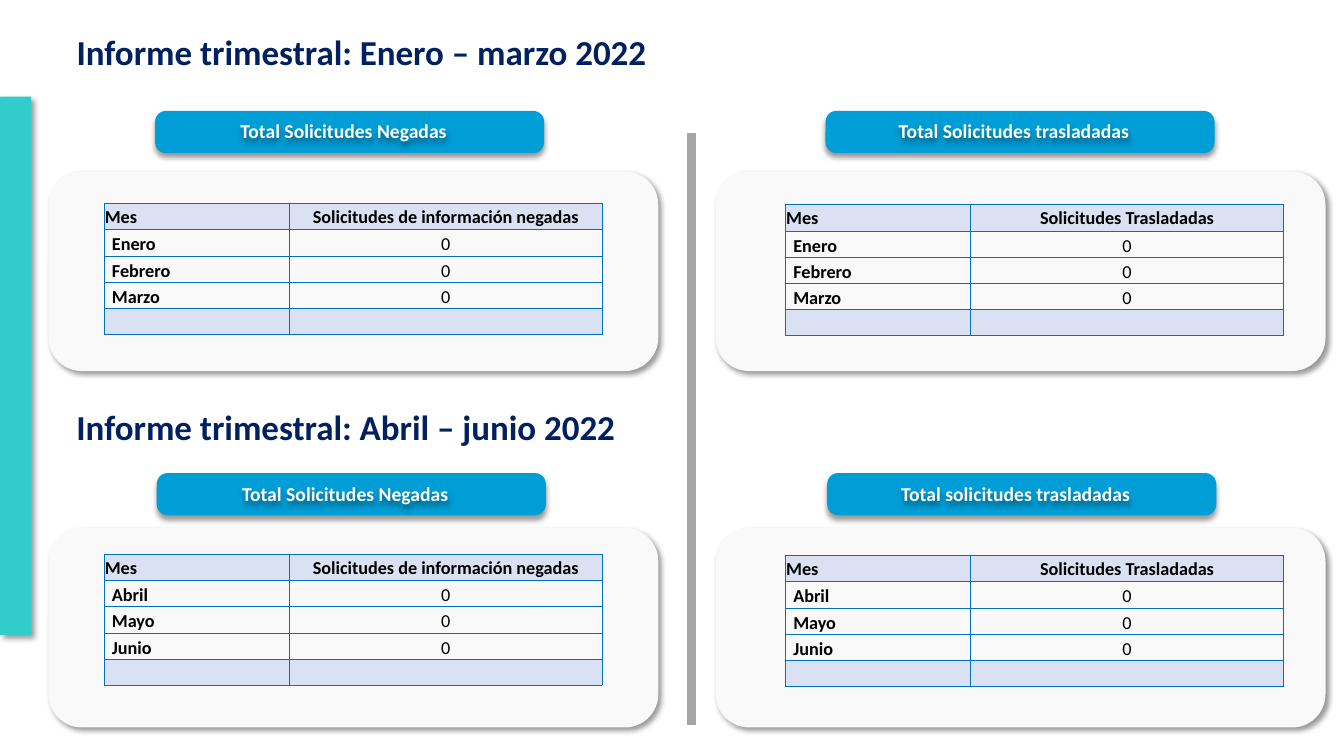
"""Builds the slide of quarterly tables of denied and transferred requests."""
from dataclasses import dataclass

from lxml import etree
from pptx import Presentation
from pptx.dml.color import RGBColor
from pptx.enum.shapes import MSO_CONNECTOR, MSO_SHAPE
from pptx.enum.text import MSO_ANCHOR, MSO_AUTO_SIZE, PP_ALIGN
from pptx.oxml.ns import qn
from pptx.shapes.autoshape import Shape
from pptx.slide import Slide
from pptx.table import _Cell
from pptx.text.text import TextFrame
from pptx.util import Pt

ROUNDED, RECTANGLE = MSO_SHAPE.ROUNDED_RECTANGLE, MSO_SHAPE.RECTANGLE
STRAIGHT = MSO_CONNECTOR.STRAIGHT
LEFT, CENTER = PP_ALIGN.LEFT, PP_ALIGN.CENTER
TOP, MIDDLE, BOTTOM = MSO_ANCHOR.TOP, MSO_ANCHOR.MIDDLE, MSO_ANCHOR.BOTTOM
GROW = MSO_AUTO_SIZE.SHAPE_TO_FIT_TEXT


@dataclass(frozen=True)
class Theme:
    font: str = "Calibri"
    heading_size: float = 25
    banner_size: float = 14
    table_size: float = 13
    heading: RGBColor = RGBColor(0x00, 0x20, 0x60)
    accent: RGBColor = RGBColor(0x33, 0xCC, 0xCC)
    banner: RGBColor = RGBColor(0x01, 0x9D, 0xD6)
    banner_text: RGBColor = RGBColor(0xFF, 0xFF, 0xFF)
    panel: RGBColor = RGBColor(0xF9, 0xF9, 0xF9)
    divider: RGBColor = RGBColor(0xA5, 0xA5, 0xA5)
    band: RGBColor = RGBColor(0xD9, 0xE1, 0xF2)
    border: RGBColor = RGBColor(0x00, 0x70, 0xC0)
    table_text: RGBColor = RGBColor(0x00, 0x00, 0x00)
    shadow: RGBColor = RGBColor(0x00, 0x00, 0x00)


@dataclass(frozen=True)
class Box:
    left: float
    top: float
    width: float
    height: float

    def emu(self) -> tuple[Pt, Pt, Pt, Pt]:
        return Pt(self.left), Pt(self.top), Pt(self.width), Pt(self.height)


@dataclass(frozen=True)
class Quarter:
    heading: str
    months: tuple[str, ...]
    banners: tuple[str, str]
    heading_top: float
    banner_top: float
    banner_shift: float
    panel_top: float
    table_top: float


@dataclass(frozen=True)
class Category:
    count_header: str
    panel_left: float
    banner_left: float
    table_left: float
    table_drop: float


THEME = Theme()
QUARTERS = (
    Quarter("Informe trimestral: Enero – marzo 2022", ("Enero", "Febrero", "Marzo"),
            ("Total Solicitudes Negadas", "Total Solicitudes trasladadas"),
            18, 79.2, 0, 122.4, 145.4),
    Quarter("Informe trimestral: Abril – junio 2022", ("Abril", "Mayo", "Junio"),
            ("Total Solicitudes Negadas", "Total solicitudes trasladadas"),
            285.8, 337.9, 1.2, 377, 396),
)
CATEGORIES = (
    Category("Solicitudes de información negadas", 34.6, 110.8, 74.2, 0),
    Category("Solicitudes Trasladadas", 511.2, 589.7, 560.9, 0.8),
)
COLUMN_WIDTHS = (132.5, 223.2)
ROW_HEIGHT = 18.7


def cast_shadow(shape: Shape, degrees: int) -> None:
    shape.shadow.inherit = False
    effects = shape._element.spPr.find(qn("a:effectLst"))
    shadow = etree.SubElement(effects, qn("a:outerShdw"), blurRad=str(Pt(4)), dist=str(Pt(3)),
                              dir=str(degrees * 60000), algn="t", rotWithShape="0")
    color = etree.SubElement(shadow, qn("a:srgbClr"), val=str(THEME.shadow))
    etree.SubElement(color, qn("a:alpha"), val="40000")


def add_block(shapes, kind: int, box: Box, color: RGBColor, degrees: int = 45) -> Shape:
    block = shapes.add_shape(kind, *box.emu())
    block.fill.solid()
    block.fill.fore_color.rgb = color
    block.line.fill.background()
    cast_shadow(block, degrees)
    return block


def write(frame: TextFrame, text: str, size: float, color: RGBColor,
          align: PP_ALIGN = LEFT, bold: bool = True) -> None:
    frame.text = text
    paragraph = frame.paragraphs[0]
    paragraph.alignment = align
    for run in paragraph.runs:
        run.font.name = THEME.font
        run.font.size = Pt(size)
        run.font.bold = bold
        run.font.color.rgb = color


def format_heading(heading: Shape, box: Box, text: str) -> None:
    heading.left, heading.top, heading.width, heading.height = box.emu()
    frame = heading.text_frame
    frame.word_wrap = True
    frame.auto_size = GROW
    frame.vertical_anchor = TOP
    write(frame, text, THEME.heading_size, THEME.heading)


def add_banner(slide: Slide, left: float, top: float, text: str) -> None:
    group = slide.shapes.add_group_shape()
    plate = add_block(group.shapes, ROUNDED, Box(left, top, 277.9, 30.2), THEME.banner, 90)
    plate.adjustments[0] = 0.26
    label = group.shapes.add_textbox(*Box(left, top + 2.5, 269.3, 24.2).emu())
    label.text_frame.word_wrap = True
    label.text_frame.auto_size = GROW
    write(label.text_frame, text, THEME.banner_size, THEME.banner_text, CENTER)
    cast_shadow(label, 90)


def format_cell(cell: _Cell, text: str, row: int, column: int, last_row: int) -> None:
    is_header, is_band = row == 0, row in (0, last_row)
    is_month = column == 0 and not is_band
    cell.margin_left = Pt(5.8 if is_month else 0.7)
    cell.margin_right = cell.margin_top = Pt(0.7)
    cell.margin_bottom = Pt(0)
    cell.vertical_anchor = MIDDLE if is_header else BOTTOM
    write(cell.text_frame, text, THEME.table_size, THEME.table_text,
          CENTER if column else LEFT, is_header or is_month)
    if not text:
        etree.SubElement(cell.text_frame.paragraphs[0]._p, qn("a:endParaRPr"),
                         sz=str(THEME.table_size * 100))
    properties = cell._tc.get_or_add_tcPr()
    for side in ("a:lnL", "a:lnR", "a:lnT", "a:lnB"):
        edge = etree.SubElement(properties, qn(side), w=str(Pt(0.5)))
        fill = etree.SubElement(edge, qn("a:solidFill"))
        etree.SubElement(fill, qn("a:srgbClr"), val=str(THEME.border))
    if is_band:
        cell.fill.solid()
        cell.fill.fore_color.rgb = THEME.band
    else:
        cell.fill.background()


def add_month_table(slide: Slide, left: float, top: float, header: str,
                    months: tuple[str, ...]) -> None:
    rows = [("Mes", header), *((month, "0") for month in months), ("", "")]
    box = Box(left, top, sum(COLUMN_WIDTHS), ROW_HEIGHT * len(rows))
    table = slide.shapes.add_table(len(rows), len(COLUMN_WIDTHS), *box.emu()).table
    table.first_row = table.horz_banding = False
    for column, width in zip(table.columns, COLUMN_WIDTHS):
        column.width = Pt(width)
    for r, values in enumerate(rows):
        table.rows[r].height = Pt(ROW_HEIGHT)
        for c, value in enumerate(values):
            format_cell(table.cell(r, c), value, r, c, len(rows) - 1)


def add_divider(slide: Slide) -> None:
    divider = slide.shapes.add_connector(STRAIGHT, Pt(493.9), Pt(95), Pt(493.9), Pt(517.7))
    divider.line.color.rgb = THEME.divider
    divider.line.width = Pt(6)
    etree.SubElement(divider._element.spPr, qn("a:effectLst"))


def main() -> None:
    presentation = Presentation()
    presentation.slide_width, presentation.slide_height = Pt(960), Pt(540)
    slide = presentation.slides.add_slide(presentation.slide_layouts[5])
    add_block(slide.shapes, RECTANGLE, Box(0, 69.1, 22.3, 384.5), THEME.accent)
    for index, quarter in enumerate(QUARTERS):
        box = Box(47.5, quarter.heading_top, 572.4, 37.4)
        heading = slide.shapes.add_textbox(*box.emu()) if index else slide.shapes.title
        format_heading(heading, box, quarter.heading)
        for category, banner in zip(CATEGORIES, quarter.banners):
            add_block(slide.shapes, ROUNDED,
                      Box(category.panel_left, quarter.panel_top, 435.6, 142.6), THEME.panel)
            add_banner(slide, category.banner_left + quarter.banner_shift,
                       quarter.banner_top, banner)
            add_month_table(slide, category.table_left, quarter.table_top + category.table_drop,
                            category.count_header, quarter.months)
    add_divider(slide)
    presentation.save("out.pptx")


if __name__ == "__main__":
    main()
